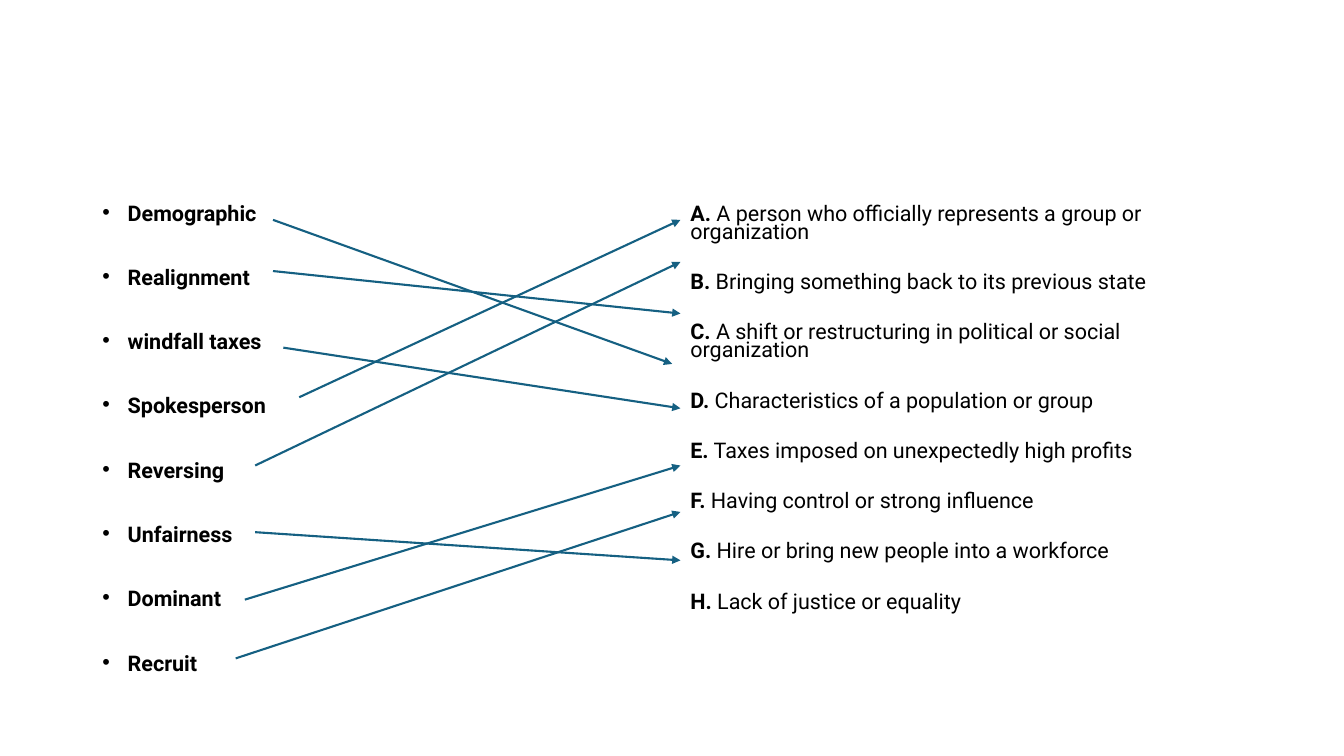
from lxml.etree import SubElement
from pptx import Presentation
from pptx.dml.color import RGBColor
from pptx.enum.shapes import MSO_CONNECTOR
from pptx.oxml.ns import qn
from pptx.util import Cm, Pt

COLOURS = {"text": "000000", "arrow": "156082"}
FONT = "Roboto"
TERMS_LEFT, MEANINGS_LEFT = 2.33, 17.15

# Each term with the start and end of its arrow, in cm
TERMS = [
    ("Demographic", (6.88, 5.54), (16.94, 9.17)),
    ("Realignment", (6.88, 6.83), (MEANINGS_LEFT, 7.9)),
    ("windfall taxes", (7.14, 8.76), (MEANINGS_LEFT, 10.29)),
    ("Spokesperson", (7.54, 10.01), (MEANINGS_LEFT, 5.54)),
    ("Reversing", (6.43, 11.73), (MEANINGS_LEFT, 6.6)),
    ("Unfairness", (6.43, 13.41), (MEANINGS_LEFT, 14.12)),
    ("Dominant", (6.17, 15.11), (MEANINGS_LEFT, 11.73)),
    ("Recruit", (5.94, 16.59), (MEANINGS_LEFT, 12.9)),
]
MEANINGS = [
    "A person who officially represents a group or organization",
    "Bringing something back to its previous state",
    "A shift or restructuring in political or social organization",
    "Characteristics of a population or group",
    "Taxes imposed on unexpectedly high profits",
    "Having control or strong influence",
    "Hire or bring new people into a workforce",
    "Lack of justice or equality",
]


def style_font(font):
    font.name = FONT
    font.size = Pt(15.4)
    font.color.rgb = RGBColor.from_string(COLOURS["text"])


def add_bullet(entry):
    properties = entry._p.get_or_add_pPr()
    properties.set("marL", str(Cm(0.64)))
    properties.set("indent", str(-Cm(0.64)))
    SubElement(properties, qn("a:buFont")).set("typeface", "Arial")
    SubElement(properties, qn("a:buChar")).set("char", "•")


def add_column(slide, left, entries, gap, bulleted=False):
    """Each entry is a list of (text, bold) pieces."""
    column = slide.shapes.add_textbox(Cm(left), Cm(5.08), Cm(14.4), Cm(12.09))
    frame = column.text_frame
    frame.word_wrap = True
    for index, pieces in enumerate(entries):
        entry = frame.add_paragraph() if index else frame.paragraphs[0]
        entry.line_spacing = 0.7
        entry.space_after = Pt(gap)
        if bulleted:
            add_bullet(entry)
        style_font(entry.font)
        for text, bold in pieces:
            piece = entry.add_run()
            piece.text = text
            piece.font.bold = bold


def add_arrow(slide, start, end):
    ends = [Cm(length) for length in (*start, *end)]
    arrow = slide.shapes.add_connector(MSO_CONNECTOR.STRAIGHT, *ends)
    arrow.line.color.rgb = RGBColor.from_string(COLOURS["arrow"])
    arrow.line.width = Pt(1.5)
    SubElement(arrow.line._get_or_add_ln(), qn("a:tailEnd")).set("type", "triangle")
    SubElement(arrow._element.spPr, qn("a:effectLst"))


def main():
    deck = Presentation()
    deck.slide_width, deck.slide_height = Cm(33.87), Cm(19.05)
    slide = deck.slides.add_slide(deck.slide_layouts[6])

    # Terms and lettered meanings
    terms = [[(term, True)] for term, _, _ in TERMS]
    meanings = [[(f"{letter}.", True), (f" {meaning}", False)]
                for letter, meaning in zip("ABCDEFGH", MEANINGS)]
    add_column(slide, TERMS_LEFT, terms, gap=33, bulleted=True)
    add_column(slide, MEANINGS_LEFT, meanings, gap=23)

    # Arrows from each term to its meaning
    for _, start, end in TERMS:
        add_arrow(slide, start, end)

    deck.save("out.pptx")


if __name__ == "__main__":
    main()
